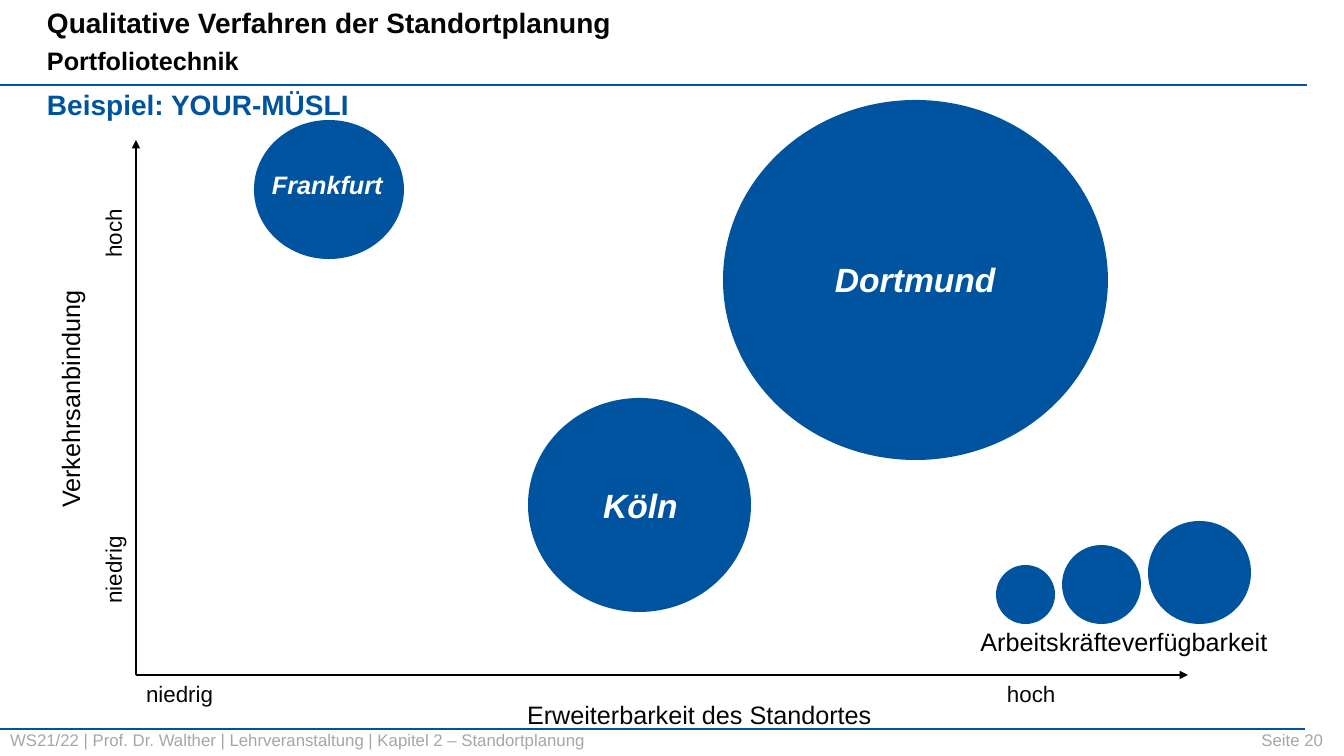
from pptx import Presentation
from pptx.dml.color import RGBColor
from pptx.enum.shapes import MSO_CONNECTOR, MSO_SHAPE
from pptx.enum.text import MSO_ANCHOR, MSO_AUTO_SIZE, PP_ALIGN
from pptx.oxml.ns import qn
from pptx.util import Pt
from lxml.etree import SubElement

# Content: lengths in px, 100.8 px to the inch
SCALE = 914400 / 100.8
BLUE, BLACK, DARK, GREY, WHITE = "00549F", "000000", "060606", "A6A6A6", "FFFFFF"
FONT = "Arial"

TITLE = [("Qualitative Verfahren der Standortplanung", 20, DARK, 0),
         ("Portfoliotechnik", 18, BLACK, 4)]
# x1, y1, x2, y2, colour, width in pt, arrow
LINES = [(0, 85, 1307, 85, BLUE, 1, False),
         (-2, 729, 1305, 729, BLUE, 1, False),
         (136, 675, 136, 140, BLACK, 1.5, True),
         (136, 675, 1188, 675, BLACK, 1.5, True)]
# left, top, width, height
BUBBLES = [(723, 100, 385, 360), (254, 120, 150, 139), (528, 398, 223, 214)]
# Legend: diameters and the left edge of each, on one common base line
LEGEND_BASE = 624
LEGEND = [(996, 59), (1062, 79), (1148, 103)]

CITY = dict(color=WHITE, bold=True, italic=True, wrap=False)
TIGHT = (4, 4, 4, 4)
# text, box, size, options
TEXTS = [
    ("Beispiel: YOUR-MÜSLI", (37, 82, 325, 44), 20,
     dict(color=BLUE, bold=True, wrap=False)),
    ("Frankfurt", (262, 164, 132, 40), 18, CITY),
    ("Köln", (593, 480, 96, 50), 24, CITY),
    ("Dortmund", (825, 254, 182, 50), 24, CITY),
    ("Arbeitskräfteverfügbarkeit", (903, 622, 442, 40), 18,
     dict(color=BLACK, align=PP_ALIGN.CENTER, insets=TIGHT, wrap=False)),
    ("Erweiterbarkeit des Standortes", (517, 694, 368, 40), 18, dict(wrap=False)),
    ("Verkehrsanbindung", (51, 283, 59, 229), 18,
     dict(color=BLACK, insets=TIGHT, wrap=False, vert="vert270")),
    ("niedrig\thoch", (136, 675, 1092, 37), 16, dict(tab=861)),
    ("niedrig\thoch", (-145, 388, 516, 37), 16,
     dict(tab=346, insets=(61, 5, 10, 5), rotation=270)),
    ("WS21/22 | Prof. Dr. Walther | Lehrveranstaltung | Kapitel 2 – Standortplanung",
     (0, 725, 1032, 30), 12, dict(color=GREY, anchor=MSO_ANCHOR.MIDDLE)),
    ("Seite 20", (1164, 730, 159, 20), 12,
     dict(color=GREY, align=PP_ALIGN.RIGHT, anchor=MSO_ANCHOR.MIDDLE,
          insets=(0, 0, 0, 0))),
]


def px(*values):
    return [round(v * SCALE) for v in values]


def rgb(hex_color):
    return RGBColor.from_string(hex_color)


def add_run(p, text, size, color, bold=False, italic=False):
    r = p.add_run()
    r.text = text
    r.font.name, r.font.size = FONT, Pt(size)
    r.font.bold, r.font.italic = bold, italic
    r.font.color.rgb = rgb(color)


def set_frame(tf, insets, anchor, wrap):
    tf.margin_left, tf.margin_top, tf.margin_right, tf.margin_bottom = px(*insets)
    tf.vertical_anchor = anchor
    tf.word_wrap = wrap
    tf.auto_size = MSO_AUTO_SIZE.NONE


def add_text(slide, text, box, size, color=DARK, bold=False, italic=False,
             align=PP_ALIGN.LEFT, anchor=MSO_ANCHOR.TOP, insets=(10, 5, 10, 5),
             wrap=True, rotation=0, vert=None, tab=None):
    sp = slide.shapes.add_textbox(*px(*box))
    sp.rotation = rotation
    tf = sp.text_frame
    set_frame(tf, insets, anchor, wrap)
    if vert:
        tf._txBody.bodyPr.set("vert", vert)
    p = tf.paragraphs[0]
    p.alignment = align
    if tab:
        tabs = SubElement(p._p.get_or_add_pPr(), qn("a:tabLst"))
        SubElement(tabs, qn("a:tab"), pos=str(px(tab)[0]), algn="l")
    add_run(p, text, size, color, bold, italic)


def add_line(slide, x1, y1, x2, y2, color, width, arrow):
    line = slide.shapes.add_connector(MSO_CONNECTOR.STRAIGHT, *px(x1, y1, x2, y2))
    line.line.color.rgb = rgb(color)
    line.line.width = Pt(width)
    if arrow:
        SubElement(line.line._get_or_add_ln(), qn("a:tailEnd"), type="triangle")
    SubElement(line._element.spPr, qn("a:effectLst"))


def add_bubble(slide, *box):
    sp = slide.shapes.add_shape(MSO_SHAPE.OVAL, *px(*box))
    sp.shadow.inherit = False
    sp.fill.solid()
    sp.fill.fore_color.rgb = rgb(BLUE)
    sp.line.fill.background()


def main():
    prs = Presentation()
    prs.slide_width, prs.slide_height = px(1344, 756)
    slide = prs.slides.add_slide(prs.slide_layouts[5])

    # Title and subtitle
    title = slide.shapes.title
    title.left, title.top, title.width, title.height = px(37, 0, 900, 81)
    tf = title.text_frame
    set_frame(tf, (10, 5, 10, 5), MSO_ANCHOR.MIDDLE, True)
    for i, (text, size, color, before) in enumerate(TITLE):
        p = tf.add_paragraph() if i else tf.paragraphs[0]
        p.alignment = PP_ALIGN.LEFT
        p.space_before = Pt(before)
        add_run(p, text, size, color, bold=True)

    # Rules and axes
    for line in LINES:
        add_line(slide, *line)

    # City bubbles and size legend
    for box in BUBBLES:
        add_bubble(slide, *box)
    for left, size in LEGEND:
        add_bubble(slide, left, LEGEND_BASE - size, size, size)

    # Labels and footer
    for text, box, size, options in TEXTS:
        add_text(slide, text, box, size, **options)

    prs.save("out.pptx")


if __name__ == "__main__":
    main()
